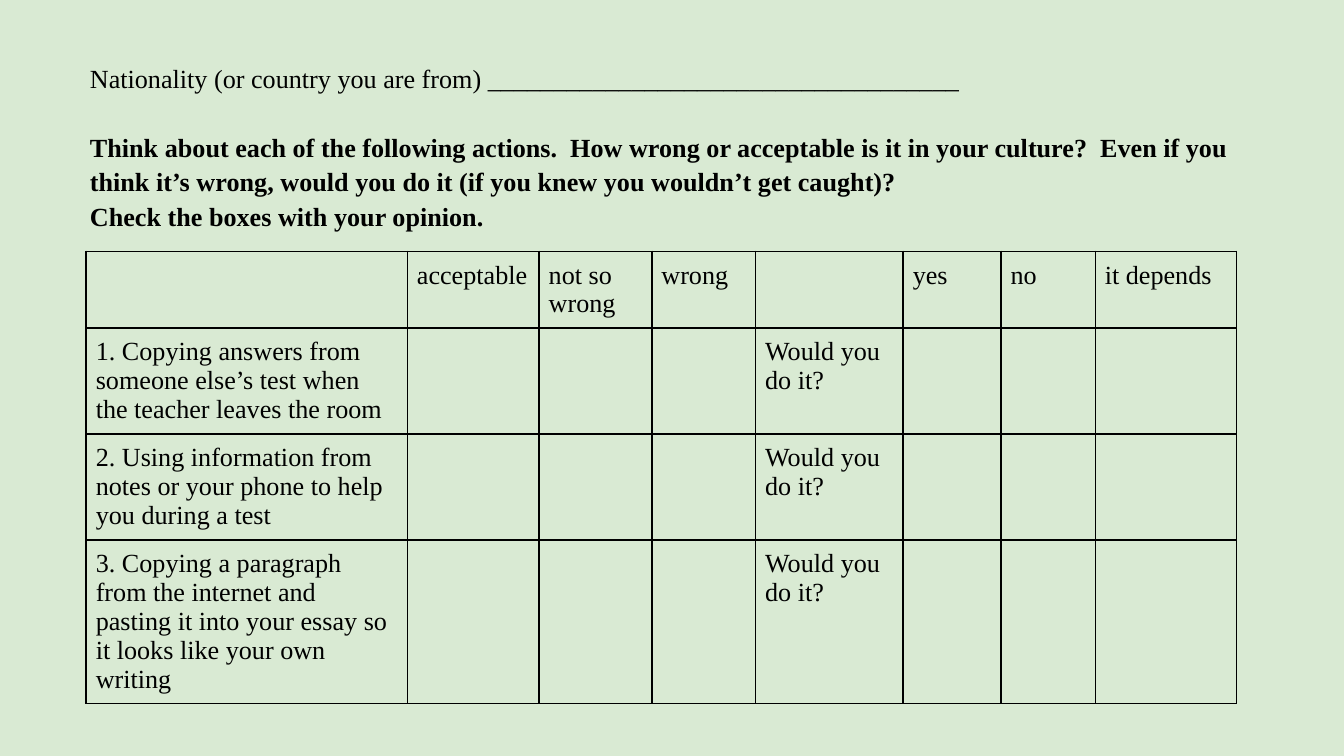
import pptx
import pptx.dml.color
import pptx.enum.text
import pptx.oxml.ns
import pptx.util
from lxml import etree

Cm = pptx.util.Cm
Pt = pptx.util.Pt
GREEN = pptx.dml.color.RGBColor(0xD9, 0xEA, 0xD3)
BLACK = pptx.dml.color.RGBColor(0, 0, 0)
FONT = "Times New Roman"

HEADS = ["", "acceptable", "not so wrong", "wrong", "", "yes", "no", "it depends"]
ACTIONS = [
    "1. Copying answers from someone else’s test when the teacher leaves the room",
    "2. Using information from notes or your phone to help you during a test",
    "3. Copying a paragraph from the internet and pasting it into your essay "
    "so it looks like your own writing",
]
ASK = "Would you do it?"
WIDTHS = [6.07, 2.49, 2.13, 1.96, 2.79, 1.85, 1.78, 2.67]
HEIGHTS = [1.45, 2, 2, 3.08]

PROMPTS = [
    ("Nationality (or country you are from) " + "_" * 36, False, 1.15, 0),
    ("Think about each of the following actions.  How wrong or acceptable is it "
     "in your culture?  Even if you think it’s wrong, would you do it "
     "(if you knew you wouldn’t get caught)?", True, 1.09, 19),
    ("Check the boxes with your opinion.", True, 1.09, 0),
]


def add_run(para, text, bold=False):
    run = para.add_run()
    run.text = text
    run.font.name = FONT
    run.font.size = Pt(14)
    run.font.bold = bold
    run.font.color.rgb = BLACK


def set_pads(item, pad):
    item.margin_left = item.margin_right = pad
    item.margin_top = item.margin_bottom = pad


def add_lines(cell):
    props = cell._tc.get_or_add_tcPr()
    qn = pptx.oxml.ns.qn
    for side in ("lnL", "lnR", "lnT", "lnB"):
        line = etree.SubElement(props, qn("a:" + side), w=str(Pt(1)))
        fill = etree.SubElement(line, qn("a:solidFill"))
        etree.SubElement(fill, qn("a:srgbClr"), val=str(BLACK))


def add_prompts(slide):
    box = slide.shapes.add_textbox(Cm(1.45), Cm(0.48), Cm(22.94), Cm(4.5))
    frame = box.text_frame
    frame.word_wrap = True
    frame.vertical_anchor = pptx.enum.text.MSO_ANCHOR.MIDDLE
    set_pads(frame, Cm(0.25))
    for i, (text, bold, space, gap) in enumerate(PROMPTS):
        para = frame.add_paragraph() if i else frame.paragraphs[0]
        para.line_spacing = space
        para.space_before = Pt(gap)
        add_run(para, text, bold)


def add_survey(slide):
    rows = [HEADS] + [[text, "", "", "", ASK, "", "", ""] for text in ACTIONS]
    frame = slide.shapes.add_table(
        len(rows), len(HEADS), Cm(1.63), Cm(4.75),
        Cm(sum(WIDTHS)), Cm(sum(HEIGHTS)))
    table = frame.table
    table.first_row = table.horz_banding = False
    for col, width in zip(table.columns, WIDTHS):
        col.width = Cm(width)
    for row, height, texts in zip(table.rows, HEIGHTS, rows):
        row.height = Cm(height)
        for cell, text in zip(row.cells, texts):
            set_pads(cell, Cm(0.18))
            add_lines(cell)
            cell.fill.background()
            if text:
                add_run(cell.text_frame.paragraphs[0], text)


def main():
    deck = pptx.Presentation()
    deck.slide_width = Cm(25.4)
    deck.slide_height = Cm(14.29)
    slide = deck.slides.add_slide(deck.slide_layouts[6])
    slide.background.fill.solid()
    slide.background.fill.fore_color.rgb = GREEN
    add_survey(slide)
    add_prompts(slide)
    deck.save("out.pptx")


if __name__ == "__main__":
    main()
